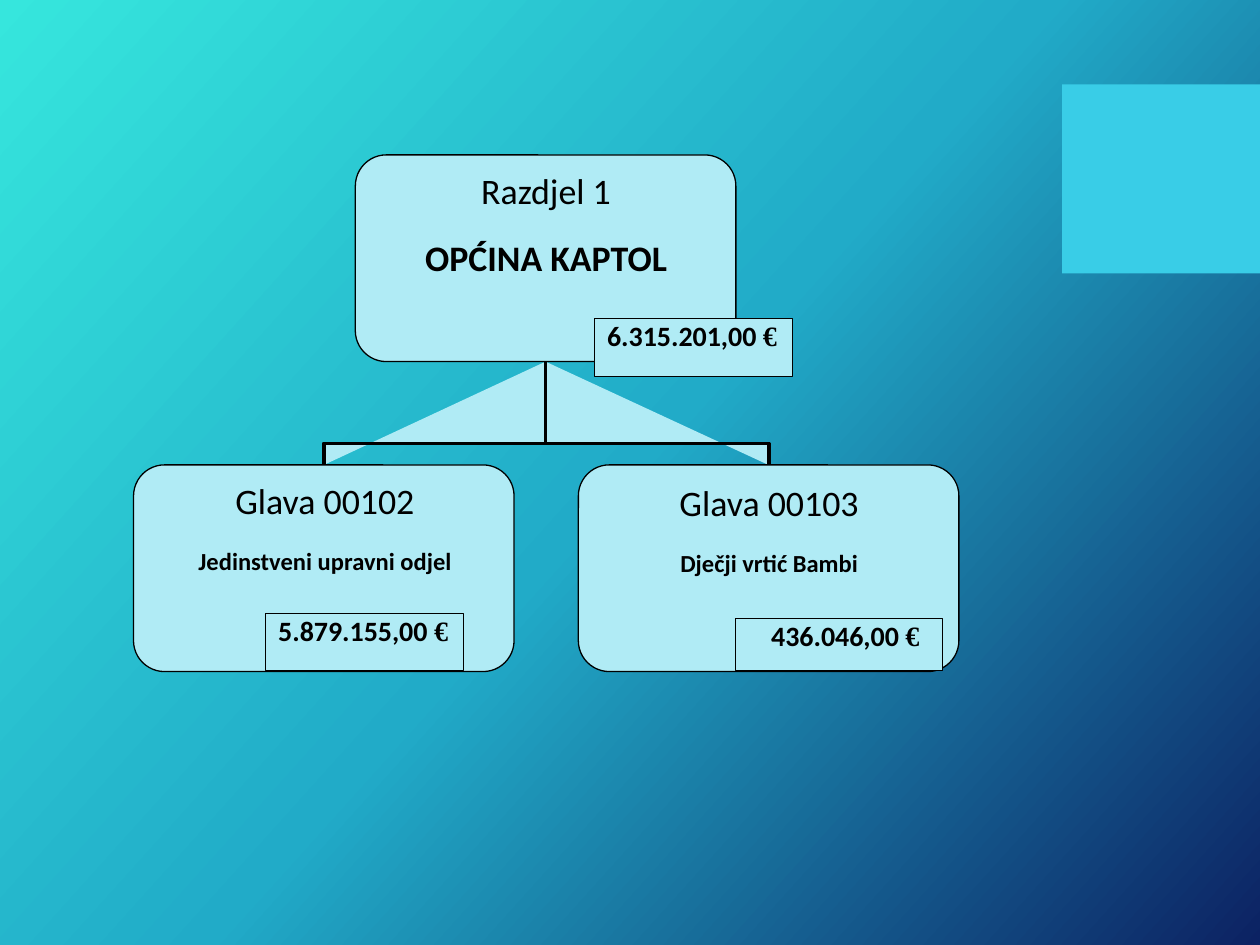
from copy import deepcopy
from dataclasses import dataclass

from pptx import Presentation
from pptx.dml.color import RGBColor
from pptx.enum.shapes import MSO_SHAPE
from pptx.enum.text import MSO_ANCHOR, PP_ALIGN
from pptx.oxml.ns import qn
from pptx.util import Inches, Pt

RECT, ROUNDED = MSO_SHAPE.RECTANGLE, MSO_SHAPE.ROUNDED_RECTANGLE
LEFT, CENTER = PP_ALIGN.LEFT, PP_ALIGN.CENTER
TOP = MSO_ANCHOR.TOP


@dataclass(frozen=True)
class Theme:
    background: tuple = ((0, "36E6DD"), (0.5, "21ABC8"), (1, "0C2263"))
    angle: int = 42
    accent: str = "39CDE7"
    box: str = "B0EBF5"
    ink: str = "000000"
    font: str = "Calibri"
    euro_font: str = "Times New Roman"
    heading: float = 20.5
    unit: float = 14
    amount: float = 16
    thin: float = 0.75
    thick: float = 2.25


class OrgChart:
    def __init__(self, slide, theme):
        self.slide, self.theme = slide, theme

    def background(self):
        fill = self.slide.background.fill
        fill.gradient()
        stops = self.slide.element.find(".//" + qn("a:gsLst"))
        stops.insert(1, deepcopy(stops[0]))
        for stop, (position, color) in zip(fill.gradient_stops, self.theme.background):
            stop.position = position
            stop.color.rgb = RGBColor.from_string(color)
        fill.gradient_angle = 360 - self.theme.angle

    def paint(self, shape, fill, width=None):
        shape.shadow.inherit = False
        shape.fill.solid()
        shape.fill.fore_color.rgb = RGBColor.from_string(fill)
        if width is None:
            shape.line.fill.background()
        else:
            shape.line.color.rgb = RGBColor.from_string(self.theme.ink)
            shape.line.width = Pt(width)
        return shape

    def panel(self, kind, place, fill, width=None):
        shape = self.slide.shapes.add_shape(kind, *map(Inches, place))
        return self.paint(shape, fill, width)

    def branch(self, points):
        start, *rest = [(Inches(x), Inches(y)) for x, y in points]
        builder = self.slide.shapes.build_freeform(*start)
        builder.add_line_segments(rest, close=False)
        self.paint(builder.convert_to_shape(), self.theme.box, self.theme.thick)

    def rounded(self, left, top, width, height):
        box = self.panel(ROUNDED, (left, top, width, height), self.theme.box, self.theme.thin)
        box.adjustments[0] = 0.15

    def frame(self, shape):
        frame = shape.text_frame
        settings = dict(margin_left=0, margin_right=0, margin_top=0, margin_bottom=0,
                        word_wrap=True, vertical_anchor=TOP)
        for name, value in settings.items():
            setattr(frame, name, value)
        return frame

    def run(self, paragraph, text, size, bold=False, font=None):
        run = paragraph.add_run()
        run.text = text
        settings = dict(name=font or self.theme.font, size=Pt(size), bold=bold)
        for name, value in settings.items():
            setattr(run.font, name, value)
        run.font.color.rgb = RGBColor.from_string(self.theme.ink)

    def label(self, place, heading, name, name_size, name_spacing):
        frame = self.frame(self.panel(RECT, place, self.theme.box))
        rows = ((frame.paragraphs[0], heading, self.theme.heading, False, 20.9, 0),
                (frame.add_paragraph(), name, name_size, True, name_spacing, 13.7))
        for paragraph, text, size, bold, spacing, before in rows:
            settings = dict(alignment=CENTER, line_spacing=Pt(spacing), space_before=Pt(before))
            for key, value in settings.items():
                setattr(paragraph, key, value)
            self.run(paragraph, text, size, bold)

    def amount(self, place, figure, align=LEFT):
        frame = self.frame(self.panel(RECT, place, self.theme.box, self.theme.thin))
        frame.margin_left = Inches(0.1)
        paragraph = frame.paragraphs[0]
        paragraph.alignment = align
        self.run(paragraph, figure + " ", self.theme.amount, True)
        self.run(paragraph, "€", self.theme.amount, True, self.theme.euro_font)


def main():
    deck = Presentation()
    deck.slide_width, deck.slide_height = Inches(10), Inches(7.5)
    theme = Theme()
    chart = OrgChart(deck.slides.add_slide(deck.slide_layouts[6]), theme)

    # Background and side block
    chart.background()
    chart.panel(RECT, (8.43, 0.67, 1.57, 1.5), theme.accent)

    # Branches from the parent down to each unit
    box_width, box_height = 3.02, 1.64
    parent_left, parent_top = 2.82, 1.23
    unit_lefts, unit_top = (1.06, 4.59), 3.69
    parent_x, parent_bottom = parent_left + box_width / 2, parent_top + box_height
    elbow_y = 3.52
    for left in reversed(unit_lefts):
        unit_x = left + box_width / 2
        chart.branch([(unit_x, unit_top), (unit_x, elbow_y),
                      (parent_x, elbow_y), (parent_x, parent_bottom)])

    # Boxes
    for left, top in [(parent_left, parent_top)] + [(x, unit_top) for x in unit_lefts]:
        chart.rounded(left, top, box_width, box_height)

    # Section and unit names
    chart.label((3.3, 1.39, 2.07, 1.13), "Razdjel 1", "OPĆINA KAPTOL", theme.heading, 24.6)
    chart.label((1.35, 3.85, 2.46, 0.98), "Glava 00102", "Jedinstveni upravni odjel",
                theme.unit, 16.9)
    chart.label((5.03, 3.87, 2.15, 0.98), "Glava 00103", "Dječji vrtić Bambi",
                theme.unit, 16.9)

    # Amounts
    chart.amount((5.84, 4.91, 1.64, 0.41), "436.046,00", CENTER)
    chart.amount((2.11, 4.87, 1.57, 0.45), "5.879.155,00")
    chart.amount((4.72, 2.53, 1.57, 0.46), "6.315.201,00")

    deck.save("out.pptx")


if __name__ == "__main__":
    main()
